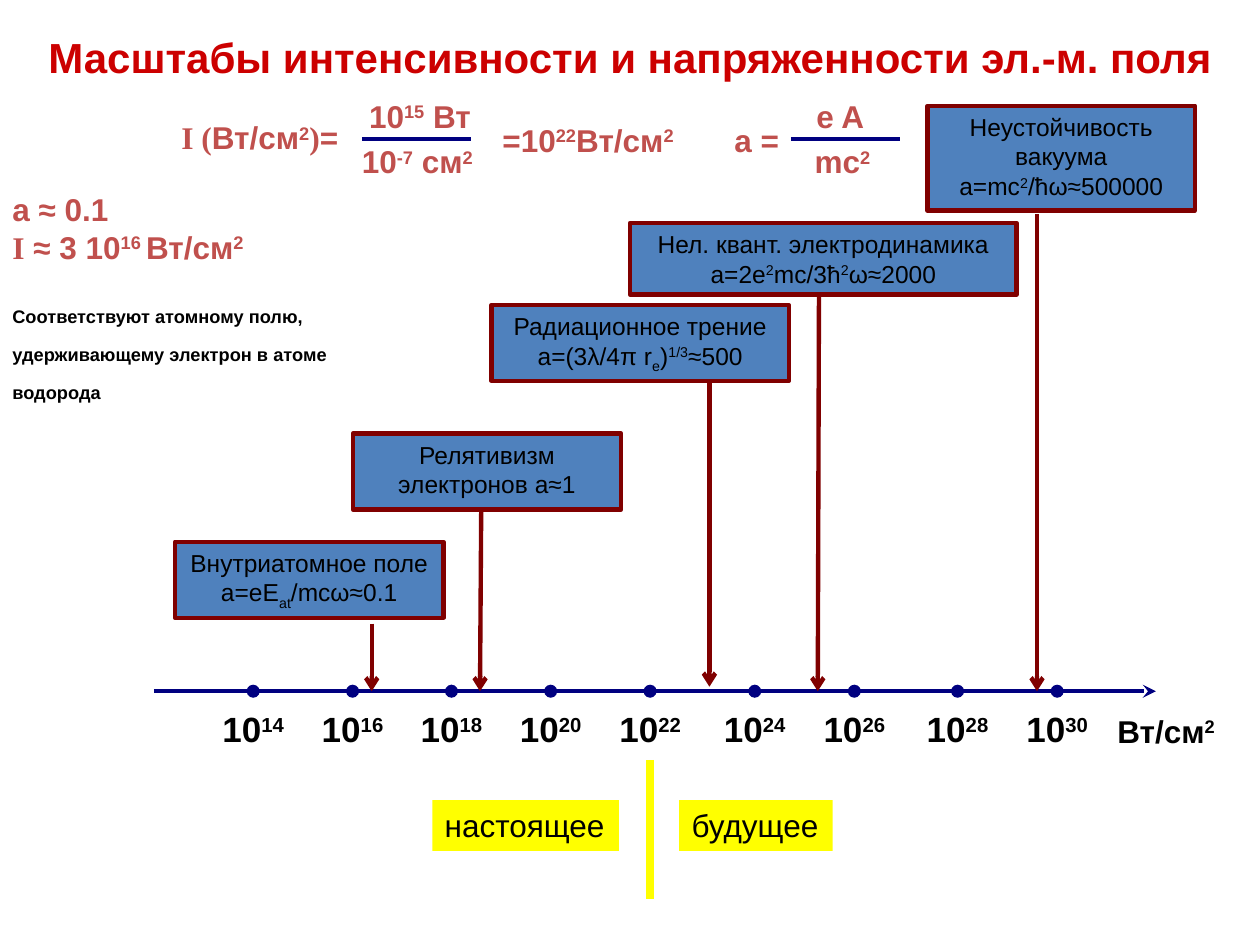
import pptx
import pptx.util
import pptx.dml.color
import pptx.enum.shapes
import pptx.enum.text
import pptx.oxml.ns
import lxml.etree

Pt = pptx.util.Pt
ALIGN = pptx.enum.text.PP_ALIGN
ANCHOR = pptx.enum.text.MSO_ANCHOR
NAVY, MAROON, BLUE, YELLOW = "000080", "800000", "4F81BD", "FFFF00"
BLACK, BRICK, RED = "000000", "C0504D", "CC0000"
# First mark of a piece between carets -> font, baseline
MARKS = {"_": ("Arial", -25000), "*": ("Times New Roman", 0)}


def color(code):
    return pptx.dml.color.RGBColor.from_string(code)


def add_xml(parent, tag, **attrs):
    name = pptx.oxml.ns.qn("a:" + tag)
    return lxml.etree.SubElement(parent, name, attrs)


class Board:
    def __init__(self, slide):
        self.slide = slide
        self.shapes = slide.shapes

    def runs(self, para, text, size, tint, bold):
        """Write runs; ^2^ is raised, ^_e^ lowered, ^*I^ set in serif."""
        for i, piece in enumerate(text.split("^")):
            if not piece:
                continue
            face, base = "Arial", 0
            if i % 2:
                face, base = MARKS.get(piece[0], ("Arial", 30000))
                piece = piece.lstrip("_*")
            run = para.add_run()
            run.text = piece
            style = {"name": face, "size": Pt(size), "bold": bold}
            for key, value in style.items():
                setattr(run.font, key, value)
            run.font.color.rgb = color(tint)
            if base:
                run._r.get_or_add_rPr().set("baseline", str(base))

    def fill(self, shape, lines, size, tint, bold, align, wrap, anchor=ANCHOR.TOP):
        """Fill a shape with paragraphs."""
        frame = shape.text_frame
        style = {"auto_size": pptx.enum.text.MSO_AUTO_SIZE.NONE,
                 "word_wrap": wrap, "vertical_anchor": anchor}
        for key, value in style.items():
            setattr(frame, key, value)
        for i, line in enumerate(lines):
            para = frame.add_paragraph() if i else frame.paragraphs[0]
            para.alignment = align
            self.runs(para, line, size, tint, bold)
        return frame

    def title(self, text, *area):
        shape = self.shapes.title
        for key, value in zip(("left", "top", "width", "height"), area):
            setattr(shape, key, Pt(value))
        self.fill(shape, [text], 24, RED, True, ALIGN.CENTER, True, ANCHOR.MIDDLE)

    def text(self, lines, area, size=18, tint=BRICK, align=ALIGN.LEFT, wrap=False):
        shape = self.shapes.add_textbox(*map(Pt, area))
        return self.fill(shape, lines, size, tint, True, align, wrap)

    def box(self, text, area, back, edge=None, size=14, align=ALIGN.CENTER):
        kind = pptx.enum.shapes.MSO_SHAPE.RECTANGLE
        shape = self.shapes.add_shape(kind, *map(Pt, area))
        shape.shadow.inherit = False
        shape.fill.solid()
        shape.fill.fore_color.rgb = color(back)
        if edge:
            shape.line.color.rgb = color(edge)
            shape.line.width = Pt(2.5)
        else:
            shape.line.fill.background()
        self.fill(shape, [text], size, BLACK, False, align, bool(edge))

    def line(self, x1, y1, x2, y2, tint=NAVY, width=2.5, tail=None):
        kind = pptx.enum.shapes.MSO_CONNECTOR.STRAIGHT
        link = self.shapes.add_connector(kind, *map(Pt, (x1, y1, x2, y2)))
        link.line.color.rgb = color(tint)
        link.line.width = Pt(width)
        if tail:
            add_xml(link.line._get_or_add_ln(), "tailEnd", type=tail)
        add_xml(link._element.spPr, "effectLst")


def draw_axis(board):
    y, step = 395, 56.7
    ticks = [144.7, 201.5, 258, 314.7, 371.5, 431.3, 488.2, 547.2, 604.1]
    for i, x in enumerate(ticks):
        board.line(x - step, y, x, y, tail="oval")
        board.text([f"10^{14 + 2 * i}^"], (x - 25.6, 401, 51.2, 31),
                   20, BLACK, ALIGN.CENTER)
    board.line(ticks[-1], y, 660.5, y, tail="stealth")
    board.text(["Вт/см^2^"], (630.7, 403.2, 71.3, 29), 18, BLACK, ALIGN.CENTER)


def draw_steps(board):
    """Arrows down to the axis, then the effect boxes over them."""
    arrows = [(212.4, 356.4, 212.4, 395), (275, 289.4, 274.3, 395),
              (405.4, 218.9, 405.4, 392.4), (468, 162, 467.3, 395),
              (592.6, 122.4, 592.6, 395)]
    for arrow in arrows:
        board.line(*arrow, MAROON, tail="arrow")
    effects = [
        ("Внутриатомное поле а=eE^_at^/mcω≈0.1", (100, 309.6, 153.4, 43.4)),
        ("Релятивизм электронов а≈1", (201.6, 247.7, 153.4, 43.4)),
        ("Радиационное трение а=(3λ/4π r^_e^)^1/3^≈500", (280.8, 174.3, 170, 43.4)),
        ("Нел. квант. электродинамика а=2e^2^mc/3ħ^2^ω≈2000",
         (360, 127.4, 221, 41)),
        ("Неустойчивость вакуума а=mc^2^/ħω≈500000", (530, 60.5, 152.9, 59.8)),
    ]
    for text, area in effects:
        board.box(text, area, BLUE, MAROON)


def draw_math(board):
    parts = [
        ("^*I (^Вт/см^2*^^*)^=".replace("2*", "2"), 96.5, 64.1, 110),
        ("10^15^ Вт", 203.8, 51.8, 75),
        ("10^-7^ см^2^", 199.7, 77.8, 80),
        ("=10^22^Вт/см^2^", 280, 65.5, 115),
        ("a =", 412.6, 65.5, 44.6),
        ("e A", 459.4, 51.8, 42.5),
        ("mc^2^", 458.4, 77.8, 46.8),
    ]
    for text, x, y, width in parts:
        board.text([text], (x, y, width, 29))
    for x in (206.8, 452):
        board.line(x, 79.4, x + 62.3, 79.4)


def draw_note(board):
    lines = ["a ≈ 0.1", "^*I^ ≈ 3 10^16 ^Вт/cм^2^",
             "^Соответствуют атомному полю,^",
             "^удерживающему электрон в атоме водорода^"]
    frame = board.text(lines, (0, 105, 213.8, 122.4), wrap=True)
    frame.paragraphs[2].space_before = Pt(20.7)
    for para in frame.paragraphs[2:]:
        para.runs[0].font.color.rgb = color(BLACK)


def draw_eras(board):
    board.line(371.5, 434.2, 371.5, 514, YELLOW, 4.5)
    for text, x, width in (("настоящее", 247, 106.6), ("будущее", 388.1, 87.8)):
        board.box(text, (x, 457.2, width, 29), YELLOW, size=18, align=ALIGN.LEFT)


def main():
    deck = pptx.Presentation()
    deck.slide_width, deck.slide_height = Pt(720), Pt(540)
    board = Board(deck.slides.add_slide(deck.slide_layouts[5]))
    board.title("Масштабы интенсивности и напряженности эл.-м. поля",
                0, 13.7, 720, 37.4)
    for draw in (draw_axis, draw_steps, draw_math, draw_note, draw_eras):
        draw(board)
    deck.save("out.pptx")


if __name__ == "__main__":
    main()
